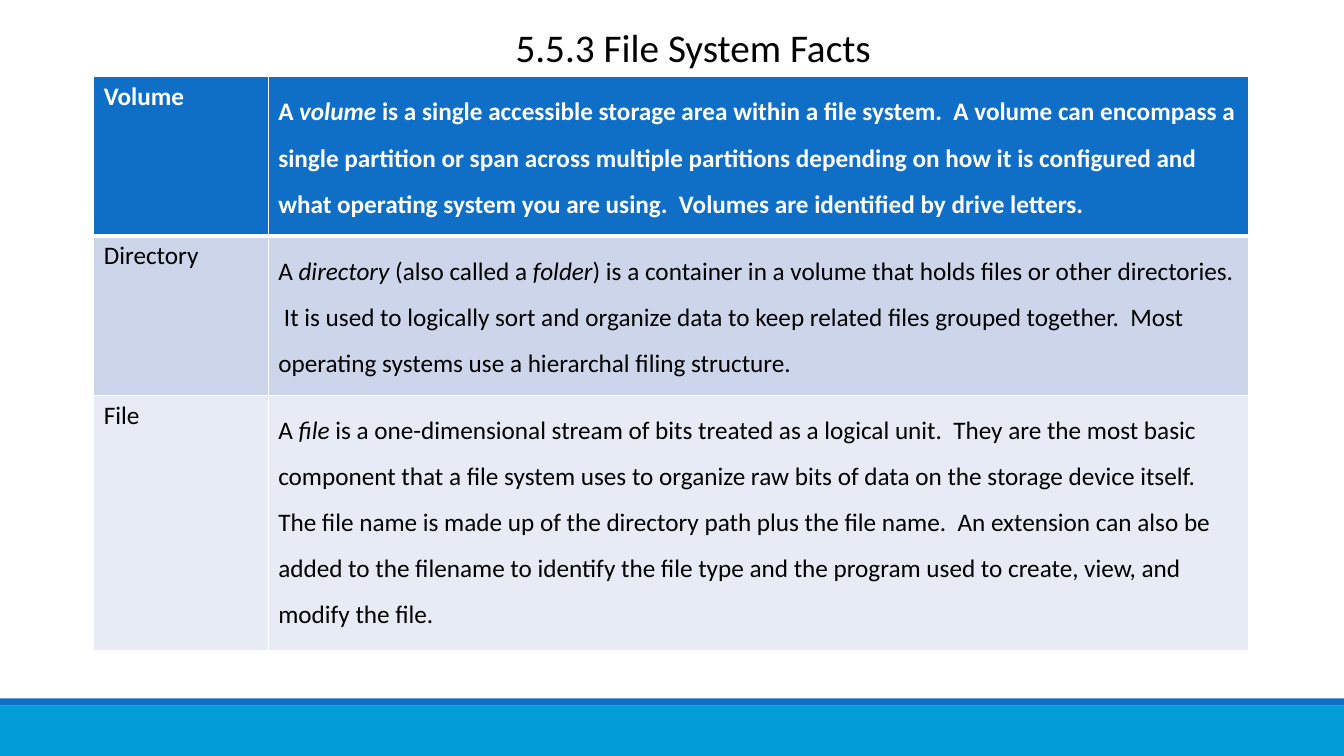
from lxml import etree
from pptx import Presentation, util as u
from pptx.dml.color import RGBColor
from pptx.enum import shapes, text
from pptx.oxml.ns import qn

WIDTH, HEIGHT = u.Inches(13.33), u.Inches(7.5)
WHITE = RGBColor(0xFF, 0xFF, 0xFF)
BLACK = RGBColor(0, 0, 0)
BLUE = RGBColor(0x0F, 0x6F, 0xC6)
CYAN = RGBColor(0x00, 0x9D, 0xD9)
BAND_DARK = RGBColor(0xCC, 0xD5, 0xEA)
BAND_LIGHT = RGBColor(0xE7, 0xEB, 0xF5)
FONT = "Calibri"
COLUMN_WIDTHS = (1.73, 9.72)
ROW_HEIGHTS = (1.58, 1.58, 2.53)
ROW_FILLS = (BLUE, BAND_DARK, BAND_LIGHT)
FACTS = (
    ("Volume",
     "A *volume *is a single accessible storage area within a file system.  "
     "A volume can encompass a single partition or span across multiple partitions "
     "depending on how it is configured and what operating system you are using.  "
     "Volumes are identified by drive letters."),
    ("Directory",
     "A *directory* (also called a *folder*) is a container in a volume that holds "
     "files or other directories.  It is used to logically sort and organize data to "
     "keep related files grouped together.  Most operating systems use a hierarchal "
     "filing structure."),
    ("File",
     "A *file* is a one-dimensional stream of bits treated as a logical unit.  "
     "They are the most basic component that a file system uses to organize raw bits "
     "of data on the storage device itself.  The file name is made up of the directory "
     "path plus the file name.  An extension can also be added to the filename to "
     "identify the file type and the program used to create, view, and modify the file."),
)


def style_run(run, size, color, bold=False, italic=False):
    run.font.name = FONT
    run.font.size = u.Pt(size)
    run.font.color.rgb = color
    run.font.bold = bold
    run.font.italic = italic


def add_band(slide, top, height, color):
    band = slide.shapes.add_shape(shapes.MSO_SHAPE.RECTANGLE, 0, u.Inches(top),
                                  WIDTH, u.Inches(height))
    band.shadow.inherit = False
    band.fill.solid()
    band.fill.fore_color.rgb = color
    band.line.fill.background()


def add_title(slide, wording):
    box = slide.shapes.add_textbox(u.Inches(4.74), u.Inches(0.18),
                                   u.Inches(4.27), u.Inches(0.57))
    box.text_frame.word_wrap = True
    box.text_frame.text = wording
    paragraph = box.text_frame.paragraphs[0]
    paragraph.alignment = text.PP_ALIGN.CENTER
    style_run(paragraph.runs[0], 28, BLACK)


def set_borders(cell, widths):
    properties = cell._tc.get_or_add_tcPr()
    for index, (side, width) in enumerate(widths.items()):
        line = etree.Element(qn(f"a:ln{side}"), w=str(u.Pt(width)))
        fill = etree.SubElement(line, qn("a:solidFill"))
        etree.SubElement(fill, qn("a:srgbClr"), val=str(WHITE))
        properties.insert(index, line)


def fill_cell(cell, wording, fill, header, spacing):
    cell.fill.solid()
    cell.fill.fore_color.rgb = fill
    paragraph = cell.text_frame.paragraphs[0]
    paragraph.line_spacing = spacing
    for index, part in enumerate(wording.split("*")):
        run = paragraph.add_run()
        run.text = part
        style_run(run, 18, WHITE if header else BLACK, header, index % 2 == 1)


def add_facts_table(slide):
    frame = slide.shapes.add_table(len(FACTS), len(COLUMN_WIDTHS),
                                   u.Inches(0.93), u.Inches(0.76),
                                   u.Inches(sum(COLUMN_WIDTHS)),
                                   u.Inches(sum(ROW_HEIGHTS)))
    table = frame.table
    for column, width in zip(table.columns, COLUMN_WIDTHS):
        column.width = u.Inches(width)
    for index, (row, height) in enumerate(zip(table.rows, ROW_HEIGHTS)):
        row.height = u.Inches(height)
        widths = {"L": 1, "R": 1, "T": 3 if index == 1 else 1,
                  "B": 3 if index == 0 else 1}
        for cell, wording, spacing in zip(row.cells, FACTS[index], (1.0, 1.5)):
            fill_cell(cell, wording, ROW_FILLS[index], index == 0, spacing)
            set_borders(cell, widths)


def main():
    presentation = Presentation()
    presentation.slide_width, presentation.slide_height = WIDTH, HEIGHT
    slide = presentation.slides.add_slide(presentation.slide_layouts[6])
    slide.background.fill.solid()
    slide.background.fill.fore_color.rgb = WHITE
    add_band(slide, 7, 0.5, CYAN)
    add_band(slide, 6.93, 0.07, BLUE)
    add_title(slide, "5.5.3 File System Facts")
    add_facts_table(slide)
    presentation.save("out.pptx")


if __name__ == "__main__":
    main()
